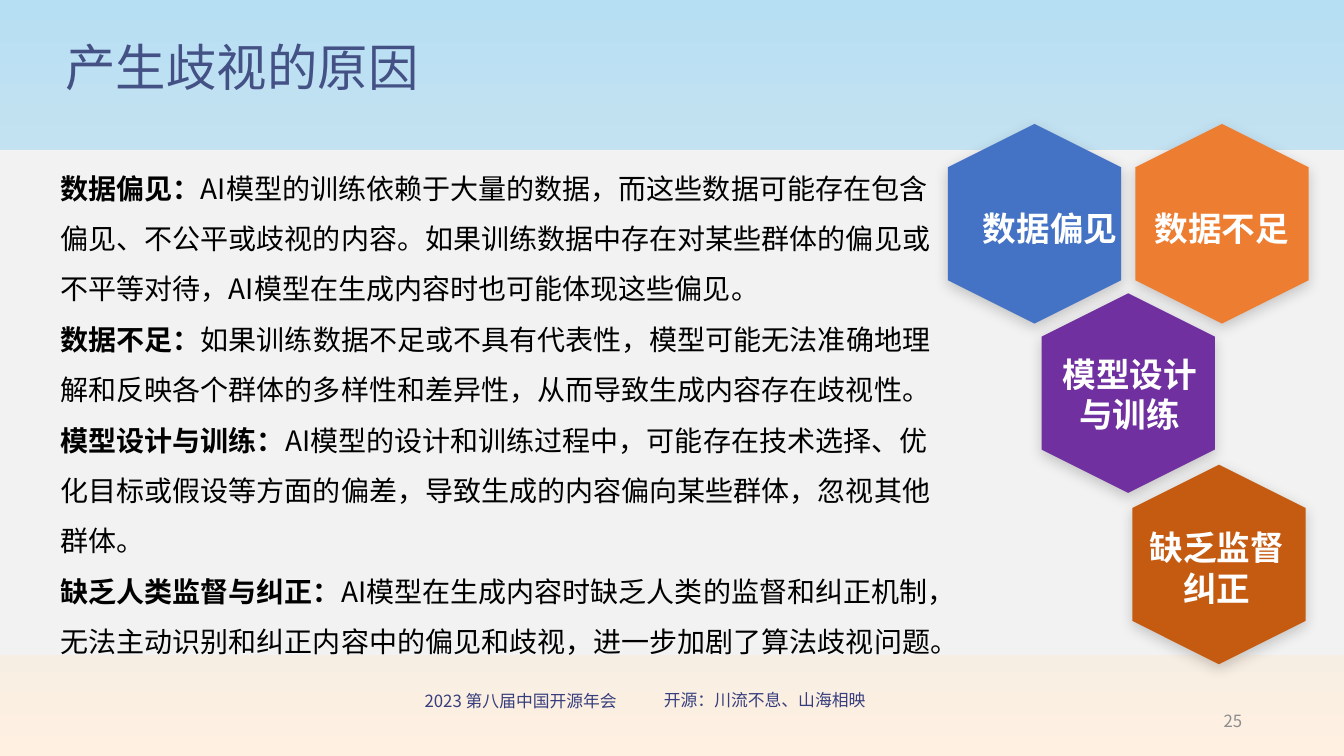
from dataclasses import dataclass

from lxml import etree
from pptx import Presentation
from pptx.dml.color import RGBColor
from pptx.enum.shapes import MSO_SHAPE
from pptx.enum.text import MSO_ANCHOR, MSO_AUTO_SIZE, PP_ALIGN
from pptx.oxml.ns import qn
from pptx.util import Inches, Pt

LEFT, CENTER, RIGHT = PP_ALIGN.LEFT, PP_ALIGN.CENTER, PP_ALIGN.RIGHT
TOP, MIDDLE = MSO_ANCHOR.TOP, MSO_ANCHOR.MIDDLE
NO_AUTOFIT = MSO_AUTO_SIZE.NONE
RECTANGLE = MSO_SHAPE.RECTANGLE


@dataclass(frozen=True)
class Theme:
    font: str = "Noto Sans CJK SC"
    sky: str = "B7DFF4"
    sand: str = "FFF0E1"
    panel: str = "F2F2F2"
    title: str = "445185"
    footer: str = "363E7D"
    number: str = "8C8C8C"
    body: str = "000000"
    label: str = "FFFFFF"
    blue: str = "4472C4"
    orange: str = "ED7D31"
    purple: str = "7030A0"
    rust: str = "C55A11"
    title_size: int = 36
    label_size: int = 24
    body_size: int = 20
    small_size: int = 12


THEME = Theme()
HEX_WIDTH, HEX_HEIGHT, HEX_SHOULDER = 1.72, 1.98, 0.43

CAUSES = [
    ("数据偏见：", "AI模型的训练依赖于大量的数据，而这些数据可能存在包含偏见、不公平或歧视的内容。"
     "如果训练数据中存在对某些群体的偏见或不平等对待，AI模型在生成内容时也可能体现这些偏见。"),
    ("数据不足：", "如果训练数据不足或不具有代表性，模型可能无法准确地理解和反映各个群体的多样性和差异性，"
     "从而导致生成内容存在歧视性。"),
    ("模型设计与训练：", "AI模型的设计和训练过程中，可能存在技术选择、优化目标或假设等方面的偏差，"
     "导致生成的内容偏向某些群体，忽视其他群体。"),
    ("缺乏人类监督与纠正：", "AI模型在生成内容时缺乏人类的监督和纠正机制，"
     "无法主动识别和纠正内容中的偏见和歧视，进一步加剧了算法歧视问题。"),
]

HEXAGONS = [
    (11.26, 1.23, THEME.orange),
    (9.4, 1.23, THEME.blue),
    (10.33, 2.91, THEME.purple),
    (11.23, 4.61, THEME.rust),
]

LABELS = [
    (9.65, 2.01, 1.56, 0.5, ["数据偏见"], LEFT),
    (10.41, 3.46, 1.59, 0.91, ["模型设计", "与训练"], CENTER),
    (11.26, 2.01, 1.72, 0.5, ["数据不足"], CENTER),
    (11.21, 5.18, 1.72, 0.91, ["缺乏监督纠正"], CENTER),
]


def add_run(p, text, size, color, bold=False):
    r = p.add_run()
    r.text = text
    r.font.size = Pt(size)
    r.font.bold = bold
    r.font.color.rgb = RGBColor.from_string(color)
    r.font.name = THEME.font
    etree.SubElement(r._r.get_or_add_rPr(), qn("a:ea"), typeface=THEME.font)


def next_paragraph(tf, index):
    return tf.add_paragraph() if index else tf.paragraphs[0]


def place(sp, left, top, width, height):
    sp.left, sp.top = Inches(left), Inches(top)
    sp.width, sp.height = Inches(width), Inches(height)


def set_background(slide):
    fill = slide.background.fill
    fill.gradient()
    fill.gradient_angle = 270
    for stop, color in zip(fill.gradient_stops, (THEME.sky, THEME.sand)):
        stop.color.rgb = RGBColor.from_string(color)


def paint(sp, color):
    sp.shadow.inherit = False
    sp.fill.solid()
    sp.fill.fore_color.rgb = RGBColor.from_string(color)
    sp.line.fill.background()


def add_panel(shapes):
    sp = shapes.add_shape(RECTANGLE, 0, Inches(1.49), Inches(13.33), Inches(5.01))
    paint(sp, THEME.panel)


def add_text(shapes, box, lines, size, color, align, bold=False, anchor=TOP):
    tf = shapes.add_textbox(*map(Inches, box)).text_frame
    tf.word_wrap = True
    tf.vertical_anchor = anchor
    for i, line in enumerate(lines):
        p = next_paragraph(tf, i)
        p.alignment = align
        add_run(p, line, size, color, bold)


def fill_title(sp, text):
    place(sp, 0.55, 0.37, 11.5, 0.65)
    tf = sp.text_frame
    tf.auto_size = NO_AUTOFIT
    tf.vertical_anchor = MIDDLE
    p = tf.paragraphs[0]
    p.alignment = LEFT
    p.line_spacing = 0.9
    add_run(p, text, THEME.title_size, THEME.title)


def fill_body(sp, causes):
    place(sp, 0.6, 1.53, 8.77, 4.97)
    tf = sp.text_frame
    tf.word_wrap = True
    tf.auto_size = NO_AUTOFIT
    tf.vertical_anchor = TOP
    tf.margin_left = tf.margin_right = tf.margin_top = tf.margin_bottom = 0
    for i, (heading, detail) in enumerate(causes):
        p = next_paragraph(tf, i)
        pPr = p._p.get_or_add_pPr()
        pPr.set("marL", "0")
        pPr.set("indent", "0")
        etree.SubElement(pPr, qn("a:buNone"))
        p.alignment = LEFT
        p.line_spacing = 1.5
        p.space_before = Pt(0)
        add_run(p, heading, THEME.body_size, THEME.body, bold=True)
        add_run(p, detail, THEME.body_size, THEME.body)


def add_soft_shadow(sp):
    effects = sp._element.spPr.find(qn("a:effectLst"))
    shadow = etree.SubElement(effects, qn("a:outerShdw"), blurRad=str(Pt(10)),
                              dist=str(Pt(3)), dir="5400000", rotWithShape="0")
    color = etree.SubElement(shadow, qn("a:srgbClr"), val="000000")
    etree.SubElement(color, qn("a:alpha"), val="18000")


def add_hexagon(shapes, left, top, color):
    middle, right = left + HEX_WIDTH / 2, left + HEX_WIDTH
    upper, lower = top + HEX_SHOULDER, top + HEX_HEIGHT - HEX_SHOULDER
    points = [(right, upper), (right, lower), (middle, top + HEX_HEIGHT),
              (left, lower), (left, upper)]
    outline = shapes.build_freeform(Inches(middle), Inches(top))
    outline.add_line_segments([(Inches(x), Inches(y)) for x, y in points])
    sp = outline.convert_to_shape()
    paint(sp, color)
    add_soft_shadow(sp)


def main():
    prs = Presentation()
    prs.slide_width, prs.slide_height = Inches(13.33), Inches(7.5)
    slide = prs.slides.add_slide(prs.slide_layouts[1])
    shapes = slide.shapes
    title, body = slide.placeholders
    set_background(slide)
    add_panel(shapes)
    shapes._spTree.append(title._element)
    shapes._spTree.append(body._element)
    fill_title(title, "产生歧视的原因")
    fill_body(body, CAUSES)

    small = THEME.small_size
    add_text(shapes, (3.79, 6.8, 2.75, 0.3), ["2023 第八届中国开源年会"], small, THEME.footer, CENTER)
    add_text(shapes, (6.38, 6.79, 2.41, 0.3), ["开源：川流不息、山海相映"], small, THEME.footer, CENTER)
    add_text(shapes, (9.42, 6.95, 3, 0.4), ["25"], small, THEME.number, RIGHT, anchor=MIDDLE)

    group = shapes.add_group_shape().shapes
    for left, top, color in HEXAGONS:
        add_hexagon(group, left, top, color)
    for *box, lines, align in LABELS:
        add_text(group, box, lines, THEME.label_size, THEME.label, align, bold=True)
    prs.save("out.pptx")


if __name__ == "__main__":
    main()
